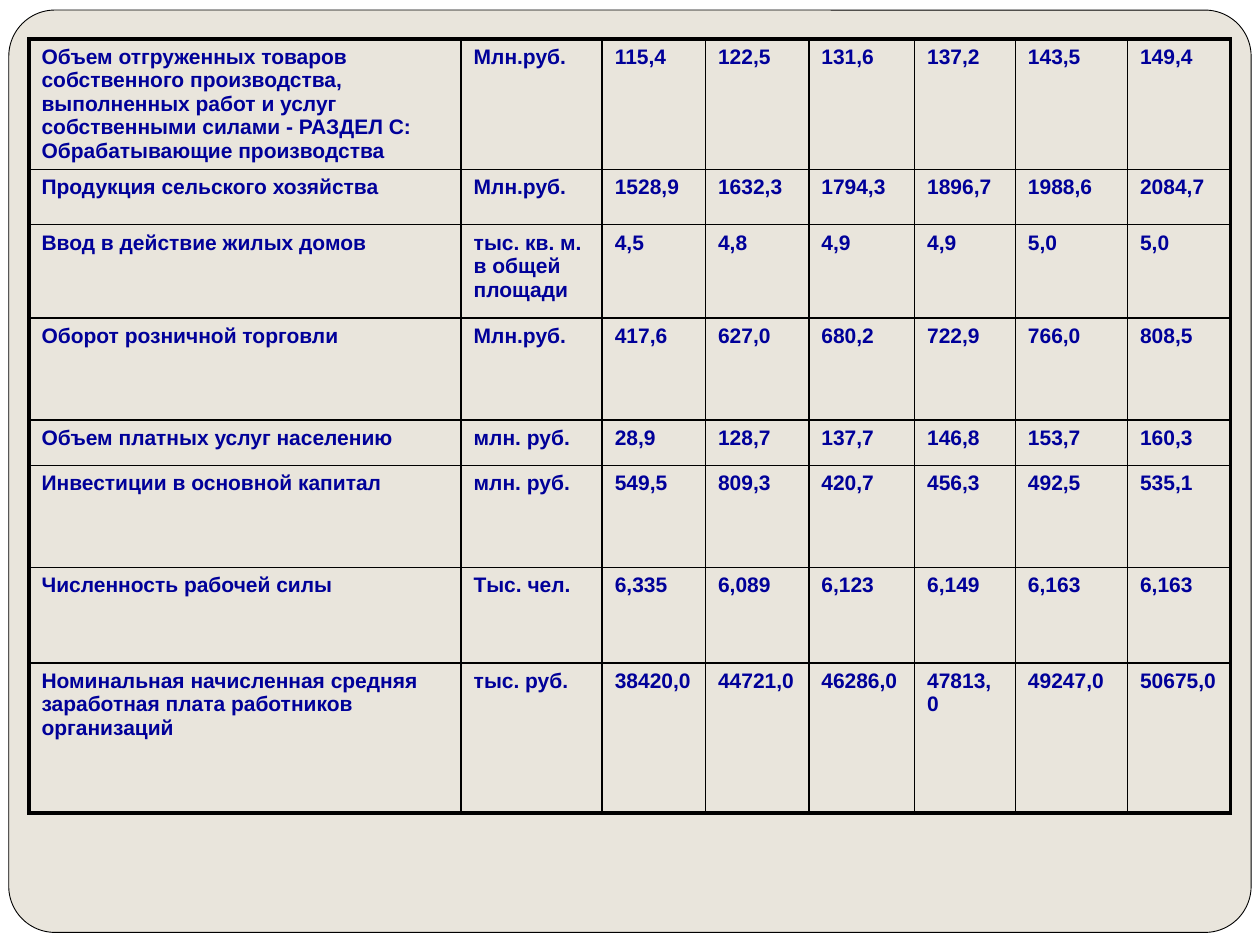
from lxml import etree
from pptx import Presentation
from pptx.dml.color import RGBColor
from pptx.enum.shapes import MSO_SHAPE
from pptx.oxml.ns import qn
from pptx.util import Inches, Pt

RECT, ROUND = MSO_SHAPE.RECTANGLE, MSO_SHAPE.ROUNDED_RECTANGLE
COLORS = {"page": "FFFFFF", "panel": "E9E5DC", "line": "000000", "text": "000099"}
FONT, SIZE = "Arial", 12
THIN, THICK = 1, 2.25

# Content: indicator, unit, six yearly values
ROWS = [
    ("Объем отгруженных товаров собственного производства, выполненных работ и услуг "
     "собственными силами - РАЗДЕЛ С: Обрабатывающие производства",
     "Млн.руб.", "115,4", "122,5", "131,6", "137,2", "143,5", "149,4"),
    ("Продукция сельского хозяйства",
     "Млн.руб.", "1528,9", "1632,3", "1794,3", "1896,7", "1988,6", "2084,7"),
    ("Ввод в действие жилых домов",
     "тыс. кв. м. в общей площади", "4,5", "4,8", "4,9", "4,9", "5,0", "5,0"),
    ("Оборот розничной торговли",
     "Млн.руб.", "417,6", "627,0", "680,2", "722,9", "766,0", "808,5"),
    ("Объем платных услуг населению",
     "млн. руб.", "28,9", "128,7", "137,7", "146,8", "153,7", "160,3"),
    ("Инвестиции в основной капитал",
     "млн. руб.", "549,5", "809,3", "420,7", "456,3", "492,5", "535,1"),
    ("Численность рабочей силы",
     "Тыс. чел.", "6,335", "6,089", "6,123", "6,149", "6,163", "6,163"),
    ("Номинальная начисленная средняя заработная плата работников организаций",
     "тыс. руб.", "38420,0", "44721,0", "46286,0", "47813,0", "49247,0", "50675,0"),
]
WIDTHS = [3.43, 1.12, 0.82, 0.82, 0.84, 0.8, 0.89, 0.82]
HEIGHTS = [1.03, 0.44, 0.74, 0.81, 0.36, 0.81, 0.76, 1.19]


def color(name):
    return RGBColor.from_string(COLORS[name])


def add_panel(slide, kind, box, fill):
    panel = slide.shapes.add_shape(kind, *map(Inches, box))
    panel.shadow.inherit = False
    panel.fill.solid()
    panel.fill.fore_color.rgb = color(fill)
    panel.line.fill.background()
    return panel


def set_border(cell, widths):
    props = cell._tc.get_or_add_tcPr()
    for spot, (side, width) in enumerate(widths.items()):
        line = etree.Element(qn("a:ln" + side), w=str(Pt(width)))
        fill = etree.SubElement(line, qn("a:solidFill"))
        etree.SubElement(fill, qn("a:srgbClr"), val=COLORS["line"])
        props.insert(spot, line)


def fill_cell(cell, text):
    cell.fill.background()
    run = cell.text_frame.paragraphs[0].add_run()
    run.text = text
    font = run.font
    font.name, font.size, font.bold = FONT, Pt(SIZE), True
    font.color.rgb = color("text")


def add_grid(slide):
    frame = slide.shapes.add_table(
        len(ROWS), len(WIDTHS), Inches(0.23), Inches(0.31),
        Inches(sum(WIDTHS)), Inches(sum(HEIGHTS)))
    table = frame.table
    table.first_row = table.horz_banding = False
    for col, width in zip(table.columns, WIDTHS):
        col.width = Inches(width)
    for row, height in zip(table.rows, HEIGHTS):
        row.height = Inches(height)

    # Thick lines only on the outer edge
    last_row, last_col = len(ROWS) - 1, len(WIDTHS) - 1
    for r, row in enumerate(ROWS):
        for c, text in enumerate(row):
            cell = table.cell(r, c)
            fill_cell(cell, text)
            edges = {"L": c == 0, "R": c == last_col, "T": r == 0, "B": r == last_row}
            set_border(cell, {s: THICK if outer else THIN for s, outer in edges.items()})


def main():
    deck = Presentation()
    deck.slide_width, deck.slide_height = Inches(10), Inches(7.5)
    slide = deck.slides.add_slide(deck.slide_layouts[6])
    slide.background.fill.solid()
    slide.background.fill.fore_color.rgb = color("panel")

    # White page with a rounded panel
    add_panel(slide, RECT, (0, 0, 10, 7.5), "page")
    panel = add_panel(slide, ROUND, (0.07, 0.08, 9.86, 7.32), "panel")
    panel.adjustments[0] = 0.05
    panel.line.color.rgb = color("line")
    panel.line.width = Pt(0.5)

    add_grid(slide)
    deck.save("out.pptx")


if __name__ == "__main__":
    main()
